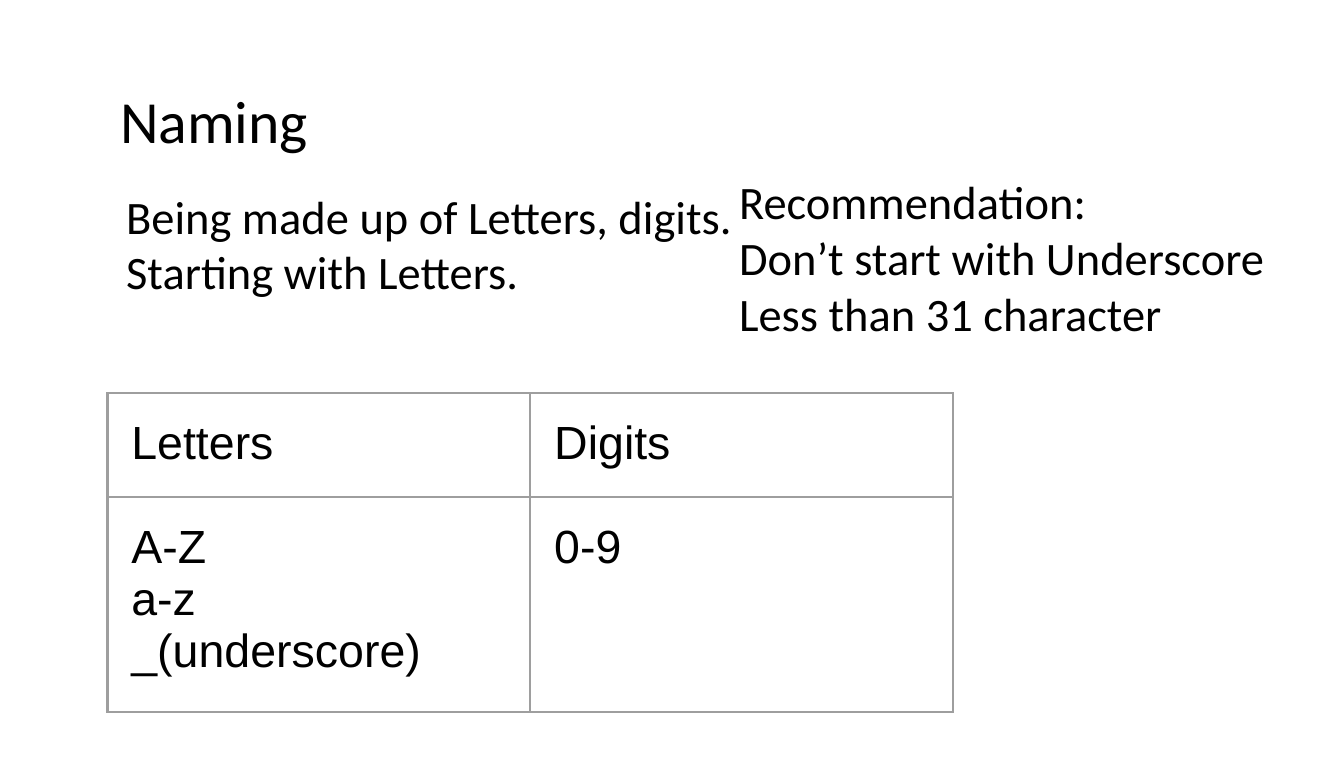
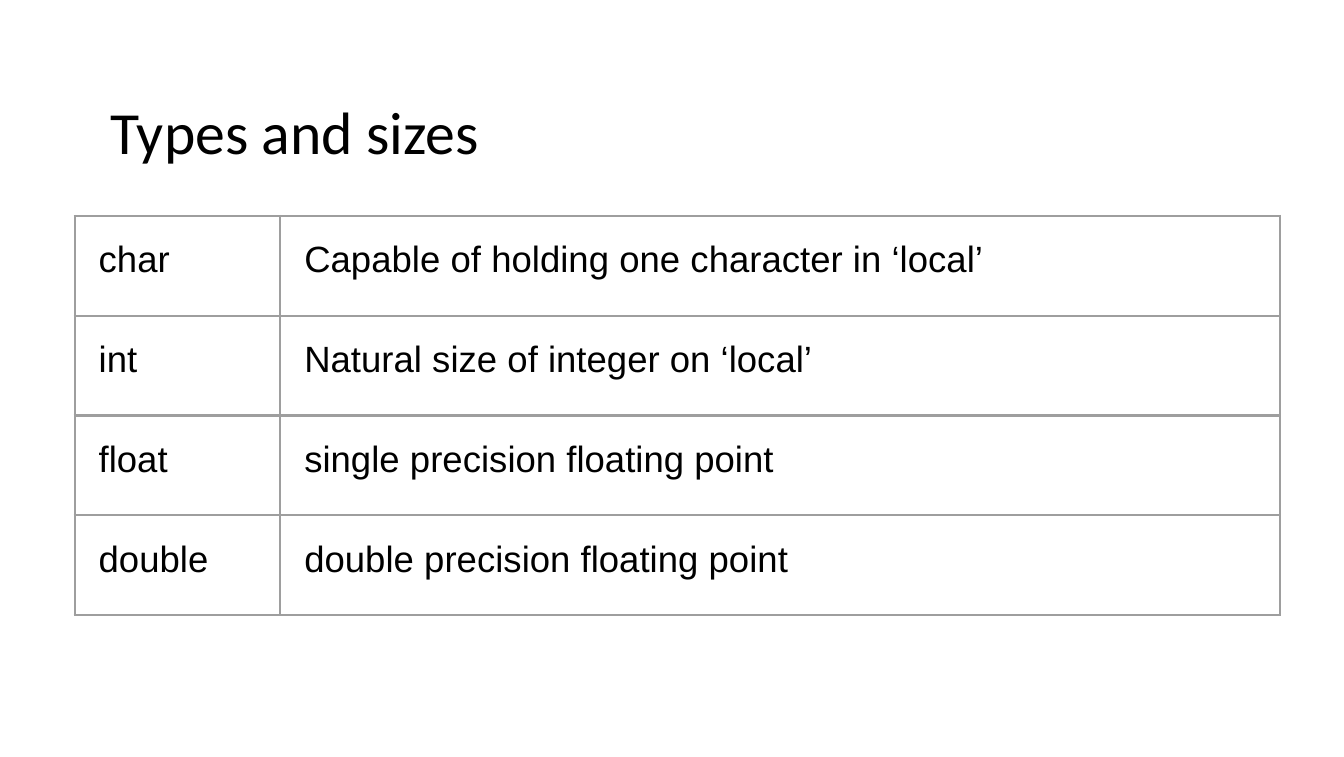
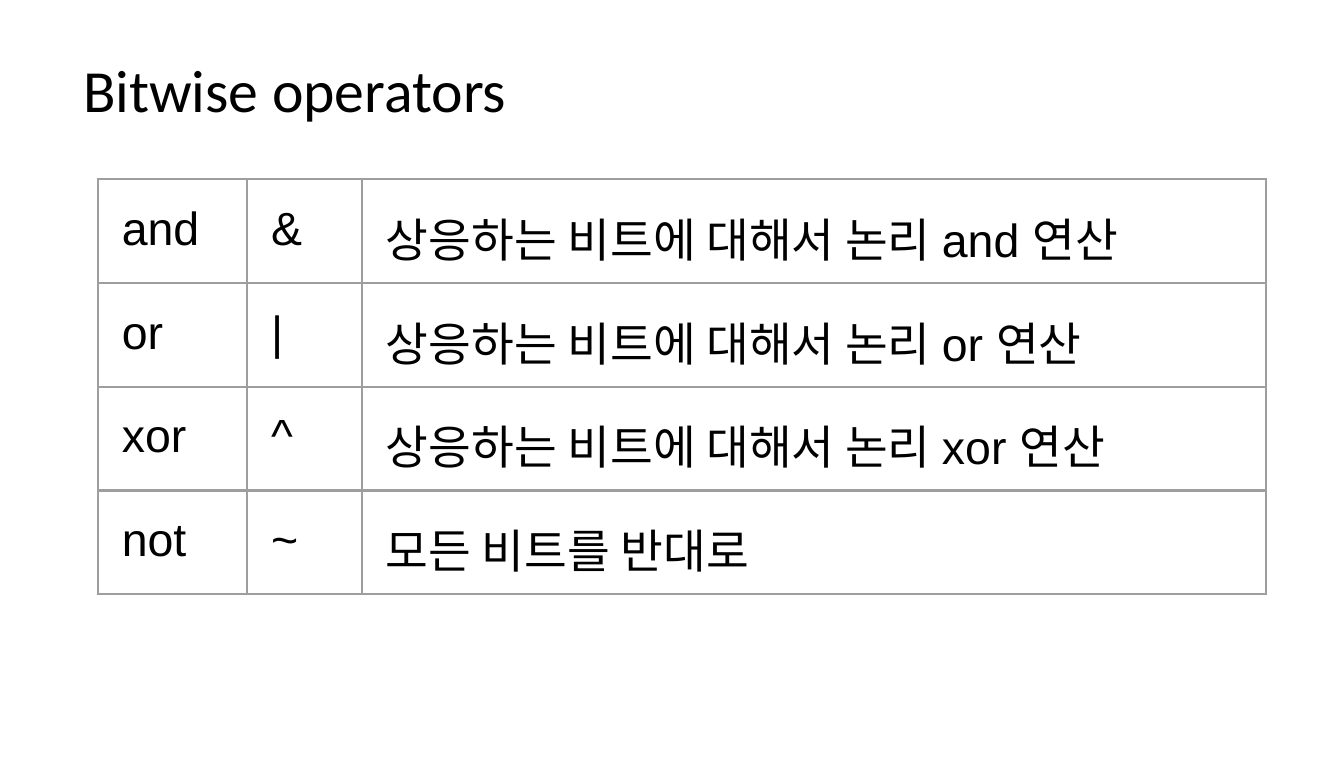
from dataclasses import dataclass

from lxml import etree
from pptx import Presentation
from pptx.dml.color import RGBColor
from pptx.enum.text import MSO_ANCHOR, MSO_AUTO_SIZE
from pptx.oxml.ns import qn
from pptx.util import Inches, Pt

TOP = MSO_ANCHOR.TOP
GROW = MSO_AUTO_SIZE.SHAPE_TO_FIT_TEXT
BORDER_SIDES = ("a:lnL", "a:lnR", "a:lnT", "a:lnB")
BLANK_LAYOUT = 6


@dataclass(frozen=True)
class Theme:
    ink: str = "000000"
    border: str = "9E9E9E"
    border_width: float = 0.75
    text_font: str = "Calibri"
    table_font: str = "Arial"
    title_size: int = 18
    body_size: int = 14
    small_size: int = 11
    slide_width: int = 405
    slide_height: int = 228
    grid_step: float = 0.1
    inset: float = 1
    title_width: float = 35.3
    title_height: float = 5


@dataclass(frozen=True)
class Box:
    left: float
    top: float
    width: float
    height: float

    def lengths(self):
        return [grid(value) for value in (self.left, self.top, self.width, self.height)]


THEME = Theme()


def grid(steps):
    return Inches(steps * THEME.grid_step)


def set_insets(target):
    target.margin_left = target.margin_right = grid(THEME.inset)
    target.margin_top = target.margin_bottom = grid(THEME.inset)


def write_text(text_frame, text, font_name, size):
    text_frame.text = text
    for paragraph in text_frame.paragraphs:
        for run in paragraph.runs:
            run.font.size = Pt(size)
            run.font.bold = False
            run.font.color.rgb = RGBColor.from_string(THEME.ink)
            run.font.name = font_name


def add_text(slide, box, text, size=THEME.body_size):
    text_frame = slide.shapes.add_textbox(*box.lengths()).text_frame
    text_frame.word_wrap = True
    text_frame.auto_size = GROW
    text_frame.vertical_anchor = TOP
    set_insets(text_frame)
    write_text(text_frame, text, THEME.text_font, size)


def add_title(slide, left, top, text):
    box = Box(left, top, THEME.title_width, THEME.title_height)
    add_text(slide, box, text, THEME.title_size)


def set_borders(cell):
    properties = cell._tc.get_or_add_tcPr()
    for position, side in enumerate(BORDER_SIDES):
        line = etree.Element(qn(side), w=str(Pt(THEME.border_width)))
        fill = etree.SubElement(line, qn("a:solidFill"))
        etree.SubElement(fill, qn("a:srgbClr"), val=THEME.border)
        properties.insert(position, line)


def share_out(parts, weights, total, attribute):
    for part, weight in zip(parts, weights):
        setattr(part, attribute, grid(total * weight / sum(weights)))


def add_grid_table(slide, box, entries, column_weights, row_weights, size):
    frame = slide.shapes.add_table(len(entries), len(column_weights), *box.lengths())
    table = frame.table
    table.first_row = table.horz_banding = False
    share_out(table.columns, column_weights, box.width, "width")
    share_out(table.rows, row_weights, box.height, "height")
    for row, texts in zip(table.rows, entries):
        for cell, text in zip(row.cells, texts):
            cell.fill.background()
            cell.vertical_anchor = TOP
            set_insets(cell)
            set_borders(cell)
            write_text(cell.text_frame, text, THEME.table_font, size)


def build_naming(slide):
    add_title(slide, 4.05, 2.5, "Naming")
    add_text(slide, Box(4.3, 6.85, 35.3, 6.7),
             "Being made up of Letters, digits.\nStarting with Letters.")
    entries = [("Letters", "Digits"), ("A-Z\na-z\n_(underscore)", "0-9")]
    add_grid_table(slide, Box(4.5, 16.45, 35.4, 13.3), entries, (1, 1), (4.3, 9),
                   THEME.body_size)
    add_text(slide, Box(29.95, 6.25, 26.2, 9.1),
             "Recommendation:\nDon’t start with Underscore\nLess than 31 character")


def build_types(slide):
    add_title(slide, 3.65, 2.95, "Types and sizes")
    entries = [
        ("char", "Capable of holding one character in ‘local’"),
        ("int", "Natural size of integer on ‘local’"),
        ("float", "single precision floating point"),
        ("double", "double precision floating point"),
    ]
    add_grid_table(slide, Box(3.13, 9.03, 50.45, 16.7), entries, (8.6, 41.8), (1,) * 4,
                   THEME.small_size)


def build_operators(slide):
    add_title(slide, 2.5, 1.2, "Bitwise operators")
    entries = [
        (name, symbol, f"상응하는 비트에 대해서 논리 {name} 연산")
        for name, symbol in (("and", "&"), ("or", "|"), ("xor", "^"))
    ]
    entries.append(("not", "~", "모든 비트를 반대로"))
    add_grid_table(slide, Box(4.1, 7.5, 48.9, 17.3), entries, (6.25, 4.8, 37.85),
                   (1,) * 4, THEME.body_size)


def main():
    presentation = Presentation()
    presentation.slide_width = Pt(THEME.slide_width)
    presentation.slide_height = Pt(THEME.slide_height)
    layout = presentation.slide_layouts[BLANK_LAYOUT]
    for build in (build_naming, build_types, build_operators):
        build(presentation.slides.add_slide(layout))
    presentation.save("out.pptx")


if __name__ == "__main__":
    main()
